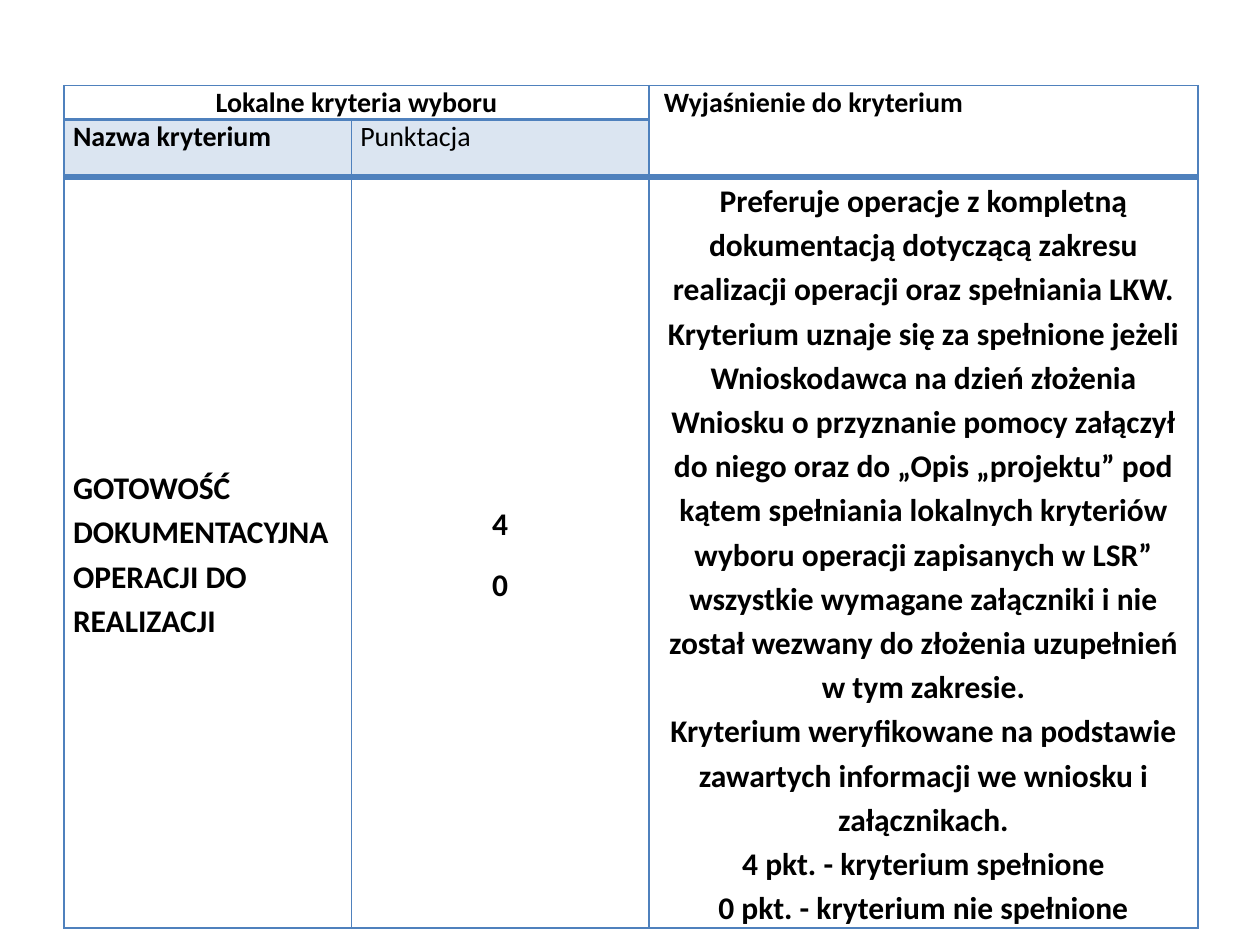
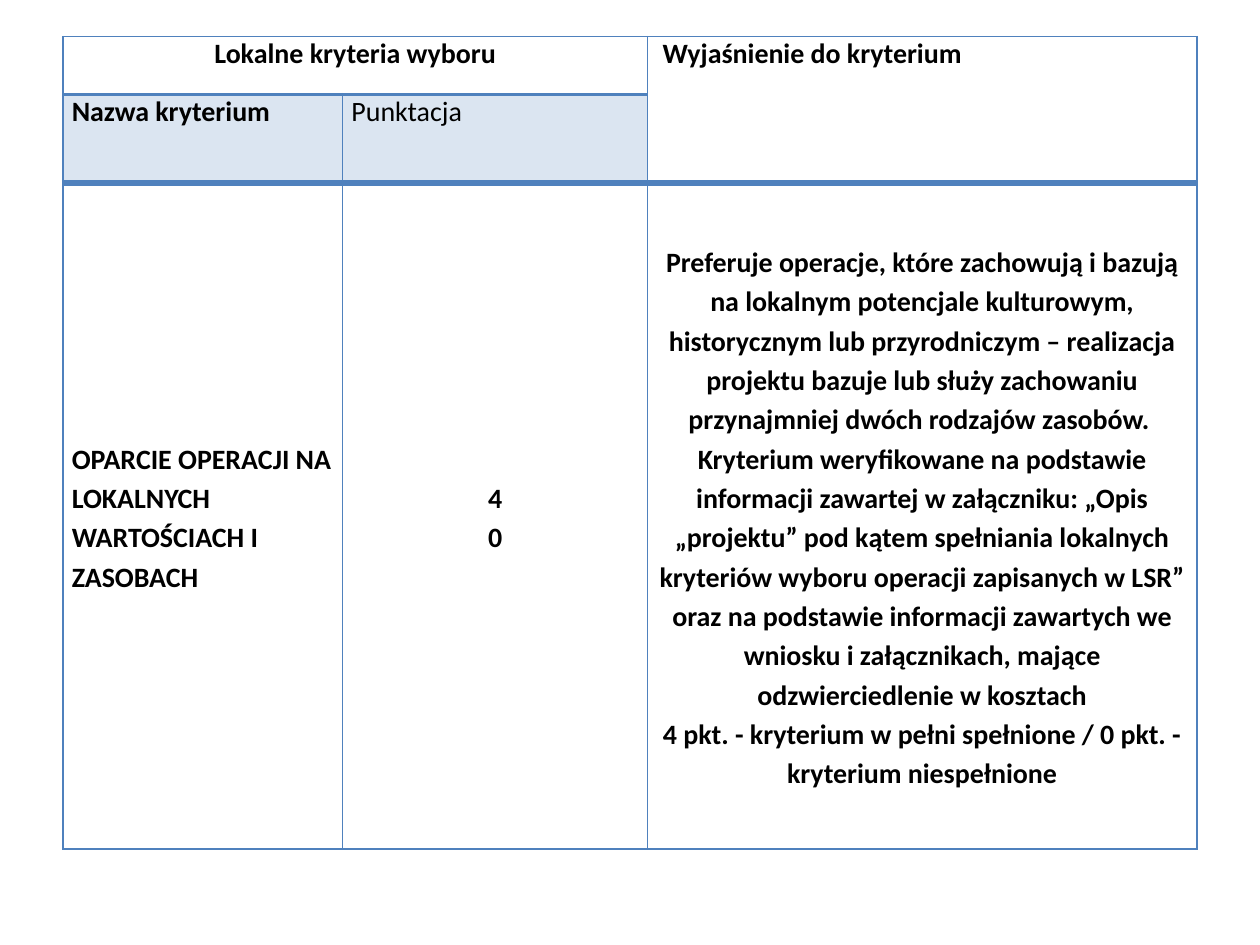
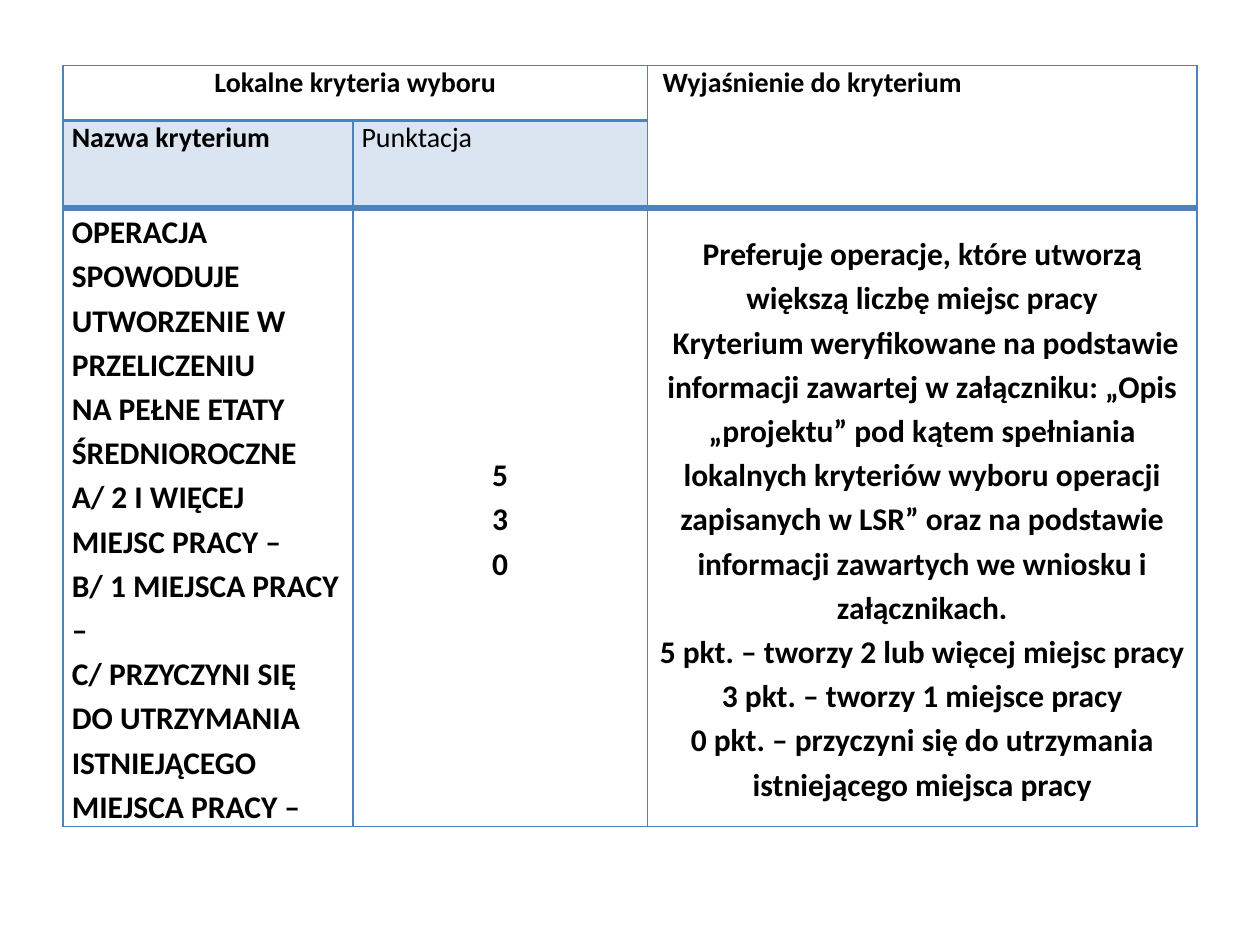
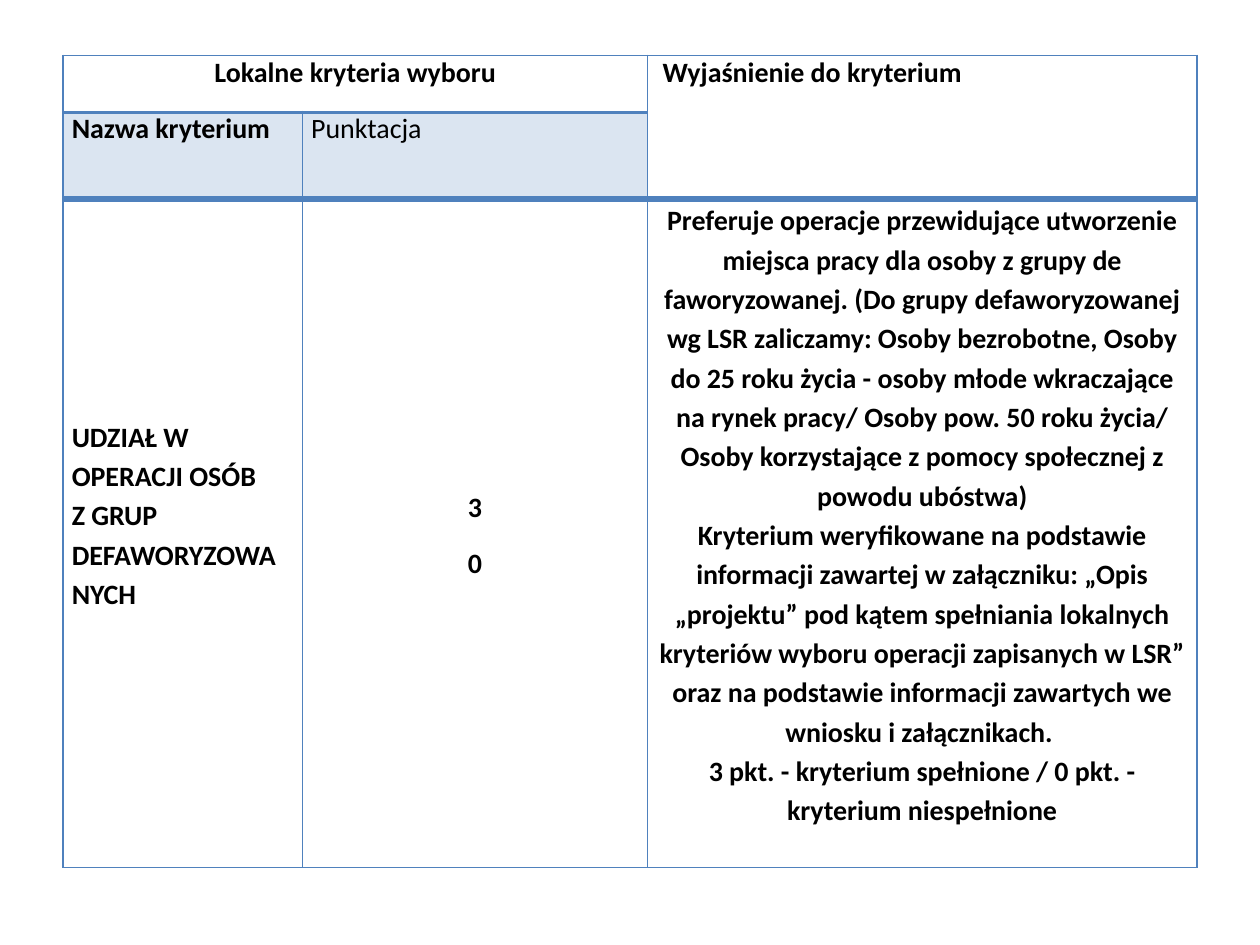
from lxml import etree
from pptx import Presentation
from pptx.dml.color import RGBColor
from pptx.enum.text import MSO_ANCHOR, PP_ALIGN
from pptx.oxml.ns import qn
from pptx.util import Inches, Pt

LEFT, CENTER = PP_ALIGN.LEFT, PP_ALIGN.CENTER
TOP, MIDDLE = MSO_ANCHOR.TOP, MSO_ANCHOR.MIDDLE
BLUE, BLACK = "4F81BD", "000000"
FONT = "Calibri"
TINT = 20
RULES = [1, 2, 4, 1]
WIDTH = 9
SIDE = 4.36

HEADS = [
    (0, 0, "Lokalne kryteria wyboru", CENTER, True),
    (0, 2, " Wyjaśnienie do kryterium", LEFT, True),
    (1, 0, "Nazwa kryterium", LEFT, True),
    (1, 1, "Punktacja", LEFT, False),
]

PAGES = [
    dict(
        box=(0.51, 0.68), name=2.28, rows=(0.27, 0.45, 5.86), size=18, after=10, foot=0,
        body=[
            ["GOTOWOŚĆ DOKUMENTACYJNA OPERACJI DO REALIZACJI"],
            ["4", "0"],
            [
                "Preferuje operacje z kompletną dokumentacją dotyczącą zakresu realizacji "
                "operacji oraz spełniania LKW. Kryterium uznaje się za spełnione jeżeli "
                "Wnioskodawca na dzień złożenia Wniosku o przyznanie pomocy załączył do niego "
                "oraz do „Opis „projektu” pod kątem spełniania lokalnych kryteriów wyboru "
                "operacji zapisanych w LSR” wszystkie wymagane załączniki i nie został wezwany "
                "do złożenia uzupełnień w tym zakresie.\n"
                "Kryterium weryfikowane na podstawie zawartych informacji we wniosku "
                "i załącznikach.",
                "4 pkt. - kryterium spełnione",
                "0 pkt. - kryterium nie spełnione",
            ],
        ],
    ),
    dict(
        box=(0.5, 0.29), name=2.22, rows=(0.46, 0.7, 5.29), size=16, after=0, foot=0,
        body=[
            ["OPARCIE OPERACJI NA LOKALNYCH WARTOŚCIACH I ZASOBACH"],
            ["4", "0"],
            [
                "Preferuje operacje, które zachowują i bazują na lokalnym potencjale "
                "kulturowym, historycznym lub przyrodniczym – realizacja projektu bazuje lub "
                "służy zachowaniu przynajmniej dwóch rodzajów zasobów. ",
                "Kryterium weryfikowane na podstawie informacji zawartej w załączniku: „Opis "
                "„projektu” pod kątem spełniania lokalnych kryteriów wyboru operacji "
                "zapisanych w LSR” oraz na podstawie informacji zawartych we wniosku "
                "i załącznikach, mające odzwierciedlenie w kosztach\n"
                "4 pkt. - kryterium w pełni spełnione / 0 pkt. - kryterium niespełnione",
            ],
        ],
    ),
    dict(
        box=(0.5, 0.52), name=2.3, rows=(0.44, 0.69, 4.89), size=18, after=0, foot=0,
        body=[
            [
                "OPERACJA SPOWODUJE UTWORZENIE W PRZELICZENIU \nNA PEŁNE ETATY ŚREDNIOROCZNE",
                "A/ 2 I WIĘCEJ MIEJSC PRACY –",
                "B/ 1 MIEJSCA PRACY –",
                "C/ PRZYCZYNI SIĘ DO UTRZYMANIA ISTNIEJĄCEGO MIEJSCA PRACY –",
            ],
            ["5", "3", "0"],
            [
                "Preferuje operacje, które utworzą większą liczbę miejsc pracy",
                " Kryterium weryfikowane na podstawie informacji zawartej w załączniku: „Opis "
                "„projektu” pod kątem spełniania lokalnych kryteriów wyboru operacji "
                "zapisanych w LSR” oraz na podstawie informacji zawartych we wniosku "
                "i załącznikach.\n"
                "5 pkt. – tworzy 2 lub więcej miejsc pracy",
                "3 pkt. – tworzy 1 miejsce pracy",
                "0 pkt. – przyczyni się do utrzymania istniejącego miejsca pracy",
            ],
        ],
    ),
    dict(
        box=(0.5, 0.44), name=1.9, rows=(0.45, 0.69, 5.22), size=16, after=10, foot=0.31,
        body=[
            ["UDZIAŁ W OPERACJI OSÓB \nZ GRUP DEFAWORYZOWANYCH"],
            ["3", "0"],
            [
                "Preferuje operacje przewidujące utworzenie miejsca pracy dla osoby z grupy de "
                "faworyzowanej. (Do grupy defaworyzowanej wg LSR zaliczamy: Osoby bezrobotne, "
                "Osoby do 25 roku życia - osoby młode wkraczające na rynek pracy/ Osoby pow. "
                "50 roku życia/ Osoby korzystające z pomocy społecznej z powodu ubóstwa)",
                "Kryterium weryfikowane na podstawie informacji zawartej w załączniku: „Opis "
                "„projektu” pod kątem spełniania lokalnych kryteriów wyboru operacji "
                "zapisanych w LSR” oraz na podstawie informacji zawartych we wniosku "
                "i załącznikach. \n"
                "3 pkt. - kryterium spełnione / 0 pkt. - kryterium niespełnione",
            ],
        ],
    ),
]


def color(code):
    return RGBColor.from_string(code)


def apply(item, form):
    for key, value in form.items():
        setattr(item, key, value)


def frame(cell, over, under):
    props = cell._tc.get_or_add_tcPr()
    for side, width in zip("LRTB", (1, 1, over, under)):
        line = etree.SubElement(props, qn(f"a:ln{side}"), w=str(Pt(width)))
        fill = etree.SubElement(line, qn("a:solidFill"))
        etree.SubElement(fill, qn("a:srgbClr"), val=BLUE)


def tint(cell):
    cell.fill.solid()
    cell.fill.fore_color.rgb = color(BLUE)
    for tone in cell._tc.tcPr.findall(qn("a:solidFill") + "/" + qn("a:srgbClr")):
        etree.SubElement(tone, qn("a:alpha"), val=str(TINT * 1000))


def write(cell, texts, size, bold, form):
    block = cell.text_frame
    for i, text in enumerate(texts):
        para = block.add_paragraph() if i else block.paragraphs[0]
        para.text = text
        apply(para, form)
        for run in para.runs:
            apply(run.font, dict(name=FONT, size=Pt(size), bold=bold))
            run.font.color.rgb = color(BLACK)
        for gap in para._p.findall(qn("a:br")):
            etree.SubElement(gap, qn("a:rPr"), sz=str(size * 100))


def style(table):
    for r in range(3):
        for c in range(3):
            cell = table.cell(r, c)
            tall = c == 2 and r < 2
            over, under = (RULES[0], RULES[2]) if tall else RULES[r:r + 2]
            frame(cell, over, under)
            if r == 1 and c < 2:
                tint(cell)
            else:
                cell.fill.background()
            apply(cell, dict(
                margin_left=Inches(0.07), margin_right=Inches(0.07),
                margin_top=0, margin_bottom=0,
                vertical_anchor=MIDDLE if r == 2 else TOP,
            ))


def head(table):
    table.cell(0, 0).merge(table.cell(0, 1))
    table.cell(0, 2).merge(table.cell(1, 2))
    for r, c, text, align, bold in HEADS:
        write(table.cell(r, c), [text], 16, bold, dict(alignment=align))


def body(table, page):
    for c, texts in enumerate(page["body"]):
        form = dict(alignment=CENTER if c else LEFT, line_spacing=1.15)
        cell = table.cell(2, c)
        if c == 1:
            form["space_after"] = Pt(page["after"])
        else:
            cell.margin_bottom = Inches(page["foot"])
        write(cell, texts, page["size"], True, form)


def grid(slide, page):
    left, top = page["box"]
    rows, name = page["rows"], page["name"]
    spot = [Inches(v) for v in (left, top, WIDTH, sum(rows))]
    table = slide.shapes.add_table(3, 3, *spot).table
    apply(table, dict(first_row=False, horz_banding=False))
    for col, width in zip(table.columns, (name, WIDTH - SIDE - name, SIDE)):
        col.width = Inches(width)
    for row, height in zip(table.rows, rows):
        row.height = Inches(height)
    style(table)
    head(table)
    body(table, page)


def main():
    deck = Presentation()
    apply(deck, dict(slide_width=Inches(10), slide_height=Inches(7.5)))
    for page in PAGES:
        grid(deck.slides.add_slide(deck.slide_layouts[6]), page)
    deck.save("out.pptx")


if __name__ == "__main__":
    main()
